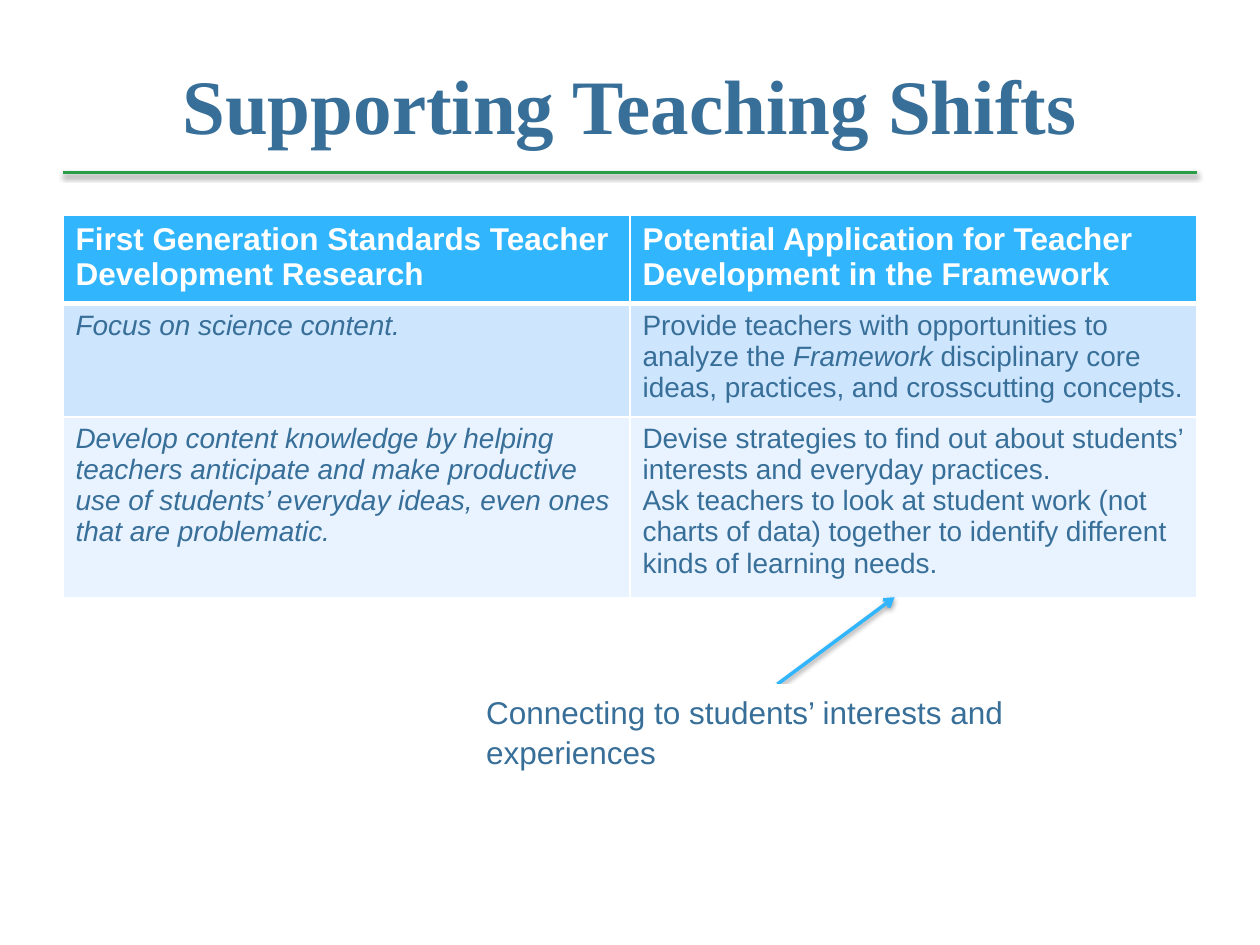
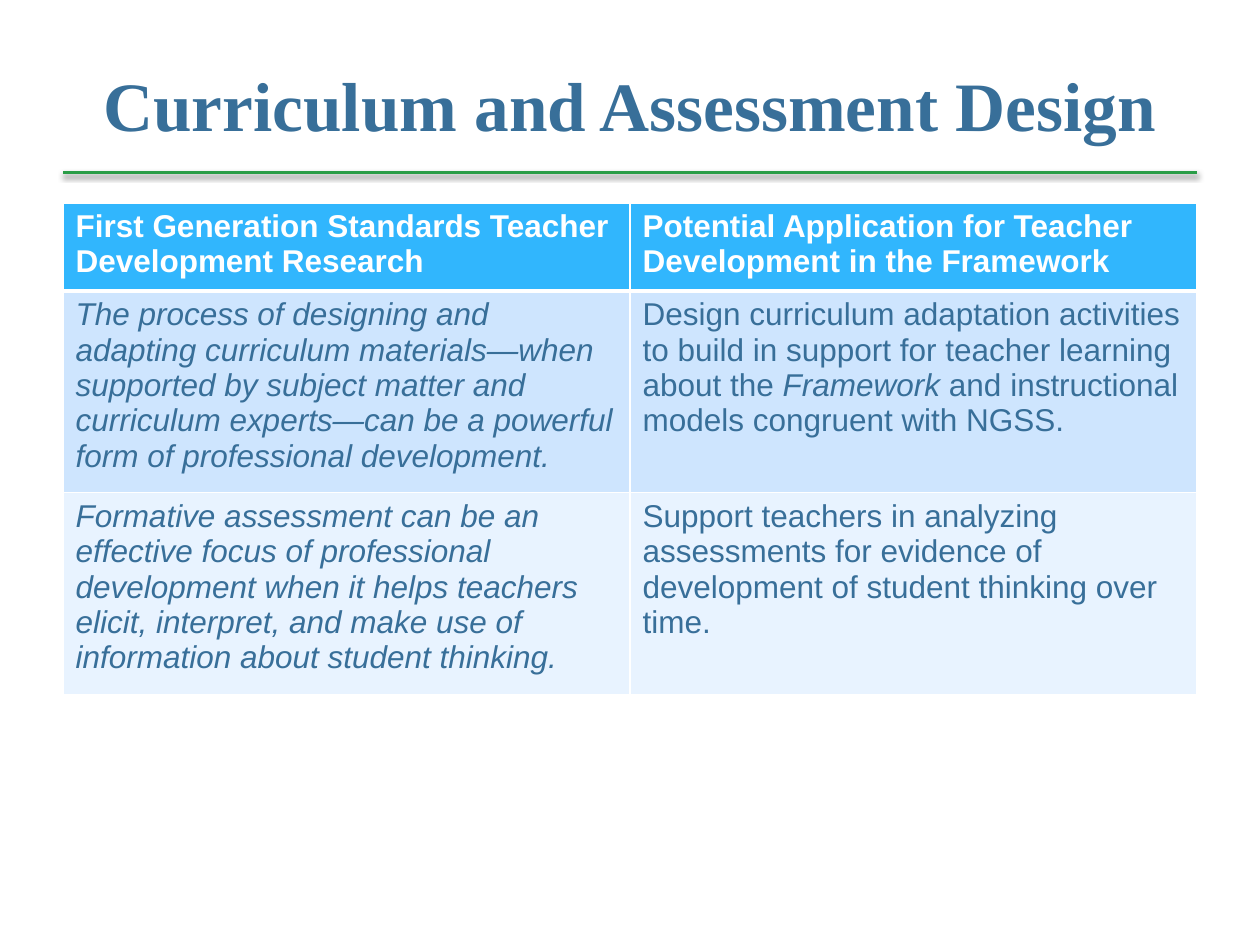
from lxml import etree
from pptx import Presentation
from pptx import util as u
from pptx.dml.color import RGBColor
from pptx.enum import shapes, text
from pptx.oxml import parse_xml
from pptx.oxml.ns import nsdecls, qn

PX = 9144
MARGIN = 50
CONTENT_W = 900
WHITE = RGBColor(0xFF, 0xFF, 0xFF)
SLATE = RGBColor(0x38, 0x6F, 0x99)
GREEN = RGBColor(0x2A, 0x9D, 0x47)
SKY = RGBColor(0x31, 0xB6, 0xFD)
BAND_DARK = RGBColor(0xCE, 0xE5, 0xFE)
BAND_LIGHT = RGBColor(0xE8, 0xF3, 0xFF)
BODY_FONT = "Arial"
TITLE_FONT = "Times New Roman"
HEADERS = [
    "First Generation Standards Teacher Development Research",
    "Potential Application for Teacher Development in the Framework",
]
SHADOW = (
    f'<a:effectLst {nsdecls("a")}><a:outerShdw blurRad="40000" dist="20000" '
    'dir="5400000" rotWithShape="0"><a:srgbClr val="000000">'
    '<a:alpha val="38000"/></a:srgbClr></a:outerShdw></a:effectLst>'
)


def px(*lengths):
    return [u.Emu(n * PX) for n in lengths]


def put_text(tf, content, size=18, font=BODY_FONT, color=SLATE, bold=False,
             align=None, spacing=None):
    """Fill a text frame; newlines split paragraphs, asterisks enclose italics."""
    tf.word_wrap = True
    for i, line in enumerate(content.split("\n")):
        p = tf.paragraphs[0] if i == 0 else tf.add_paragraph()
        p.alignment = align
        p.line_spacing = spacing
        for j, part in enumerate(line.split("*")):
            if not part:
                continue
            r = p.add_run()
            r.text = part
            r.font.name = font
            r.font.size = u.Pt(size)
            r.font.bold = bold
            r.font.italic = j % 2 == 1
            r.font.color.rgb = color


def add_line(s, start, end, color, arrow=False):
    cn = s.shapes.add_connector(shapes.MSO_CONNECTOR.STRAIGHT,
                                *px(*start), *px(*end))
    cn.line.color.rgb = color
    cn.line.width = u.Pt(2)
    if arrow:
        etree.SubElement(cn.line._get_or_add_ln(), qn("a:tailEnd"), type="arrow")
    cn._element.spPr.append(parse_xml(SHADOW))


def add_title(s, title, size):
    add_line(s, (MARGIN, 137), (MARGIN + CONTENT_W, 137), GREEN)
    tf = s.shapes.add_textbox(*px(MARGIN, 30, CONTENT_W, 105)).text_frame
    tf.vertical_anchor = text.MSO_ANCHOR.MIDDLE
    put_text(tf, title, size=size, font=TITLE_FONT, bold=True,
             align=text.PP_ALIGN.CENTER)


def set_borders(cell, top, bottom):
    tcPr = cell._tc.get_or_add_tcPr()
    for side, width in zip("LRTB", (1, 1, top, bottom)):
        ln = etree.SubElement(tcPr, qn(f"a:ln{side}"), w=str(u.Pt(width)))
        fill = etree.SubElement(ln, qn("a:solidFill"))
        etree.SubElement(fill, qn("a:srgbClr"), val=str(WHITE))


def add_comparison(s, top, rows, heights, size):
    cells = [HEADERS] + rows
    table = s.shapes.add_table(len(cells), len(HEADERS),
                               *px(MARGIN, top, CONTENT_W, sum(heights))).table
    for row, height in zip(table.rows, heights):
        row.height = u.Emu(height * PX)
    for i, row in enumerate(cells):
        header = i == 0
        fill = SKY if header else (BAND_LIGHT, BAND_DARK)[i % 2]
        for j, content in enumerate(row):
            cell = table.cell(i, j)
            set_borders(cell, top=3 if i == 1 else 1, bottom=3 if header else 1)
            cell.fill.solid()
            cell.fill.fore_color.rgb = fill
            put_text(cell.text_frame, content, size=18 if header else size,
                     color=WHITE if header else SLATE, bold=header)


def add_callout(s, content, box, target):
    left, top, width, height = box
    add_line(s, (left + width // 2 - 1, top), target, SKY, arrow=True)
    sp = s.shapes.add_textbox(*px(left, top, width, height))
    sp.fill.solid()
    sp.fill.fore_color.rgb = WHITE
    put_text(sp.text_frame, content, spacing=1.07)


def main():
    prs = Presentation()
    prs.slide_width, prs.slide_height = px(1000, 750)
    blank = prs.slide_layouts[6]

    s = prs.slides.add_slide(blank)
    add_title(s, "Supporting Teaching Shifts", 44)
    add_comparison(s, 171, [
        ["*Focus on science content.*",
         "Provide teachers with opportunities to analyze the *Framework* "
         "disciplinary core ideas, practices, and crosscutting concepts."],
        ["*Develop content knowledge by helping teachers anticipate and make "
         "productive use of students’ everyday ideas, even ones that are "
         "problematic.*",
         "Devise strategies to find out about students’ interests and everyday "
         "practices.\nAsk teachers to look at student work (not charts of data) "
         "together to identify different kinds of learning needs."],
    ], heights=(65, 84, 133), size=16)
    add_callout(s, "Connecting to students’ interests and experiences",
                (376, 543, 484, 71), (710, 474))

    s = prs.slides.add_slide(blank)
    add_title(s, "Curriculum and Assessment Design", 39.6)
    add_comparison(s, 161, [
        ["*The process of designing and adapting curriculum materials—when "
         "supported by subject matter and curriculum experts—can be a powerful "
         "form of professional development.*",
         "Design curriculum adaptation activities to build in support for "
         "teacher learning about the *Framework* and instructional models "
         "congruent with NGSS."],
        ["*Formative assessment can be an effective focus of professional "
         "development when it helps teachers elicit, interpret, and make use of "
         "information about student thinking.*",
         "Support teachers in analyzing assessments for evidence of development "
         "of student thinking over time."],
    ], heights=(65, 150, 150), size=18)

    prs.save("out.pptx")


if __name__ == "__main__":
    main()
